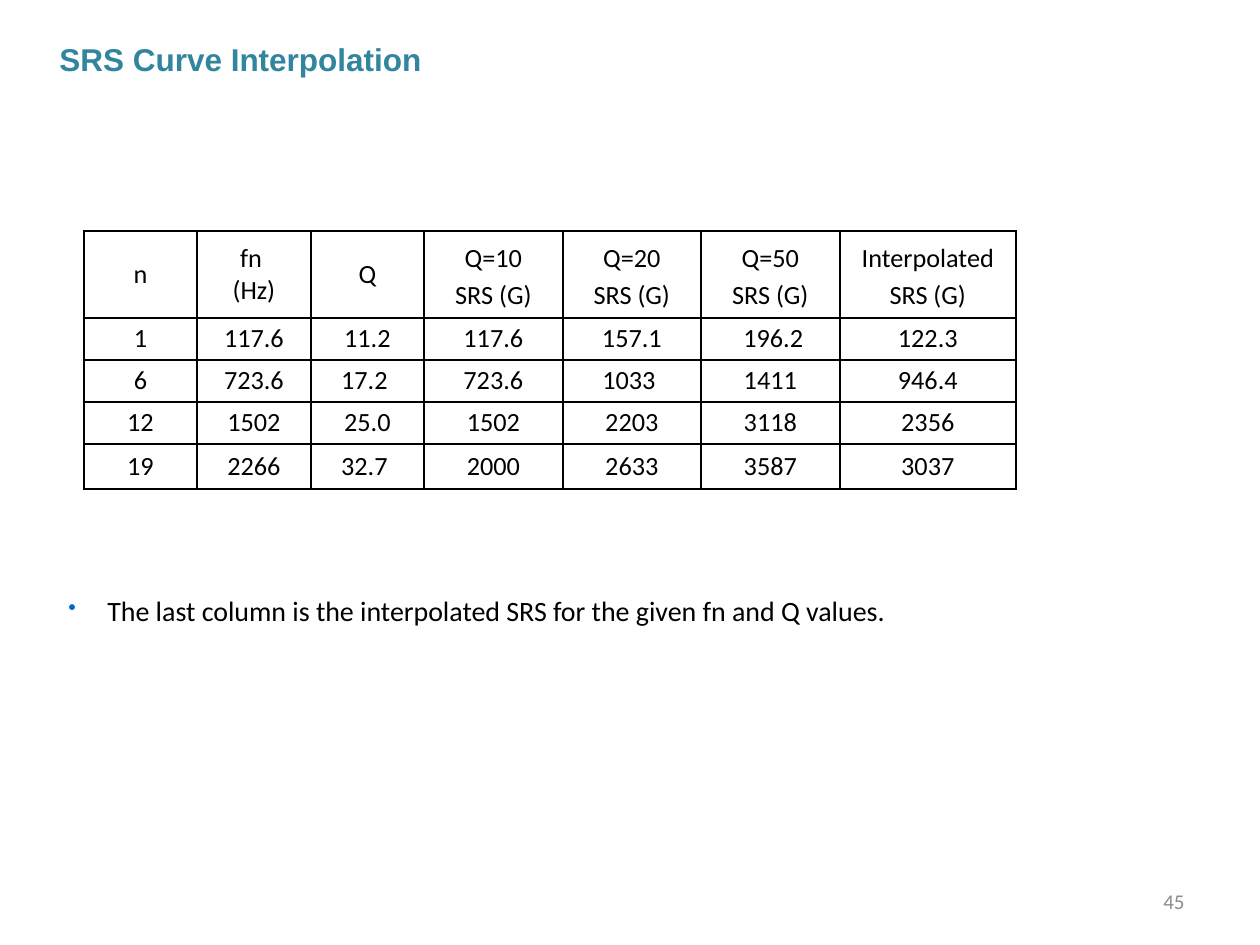
from lxml.etree import SubElement
from pptx import Presentation
from pptx.dml.color import RGBColor
from pptx.enum.text import MSO_ANCHOR, PP_ALIGN
from pptx.oxml.ns import qn
from pptx.util import Pt

COLORS = {"ink": "000000", "title": "31859C", "bullet": "0066CC", "number": "8C8C8C"}
COLUMN_WIDTHS = [113, 114, 113, 139, 138, 139, 176]
ROW_HEIGHTS = [87, 42, 42, 42, 45]
ROWS = [
    ["n", "fn \n(Hz)", "Q", "Q=10\nSRS (G)", "Q=20\nSRS (G)", "Q=50\nSRS (G)",
     "Interpolated\nSRS (G)"],
    ["1", "117.6", "11.2", "117.6", "157.1", " 196.2", "122.3"],
    ["6", "723.6", "17.2 ", "723.6", "1033 ", "1411", "946.4"],
    ["12", "1502", "25.0", "1502", "2203", "3118", "2356"],
    ["19", "2266", "32.7 ", "2000", "2633", "3587", "3037"],
]


def px(length):
    """Turn pixels into EMU at 126 pixels to the inch."""
    return round(length * 914400 / 126)


def style(paragraph, size, color, font="Calibri", bold=False):
    """Set the font of a paragraph."""
    paragraph.font.size = Pt(size)
    paragraph.font.name = font
    paragraph.font.bold = bold
    paragraph.font.color.rgb = RGBColor.from_string(COLORS[color])


def add_text(page, bounds, text, size, color, font="Calibri", bold=False, spacing=0):
    """Add a wrapped text box and return its paragraph."""
    box = page.shapes.add_textbox(*map(px, bounds))
    box.text_frame.word_wrap = True
    paragraph = box.text_frame.paragraphs[0]
    paragraph.text = text
    paragraph.space_before = paragraph.space_after = Pt(spacing)
    style(paragraph, size, color, font, bold)
    return paragraph


def add_bullet(paragraph, indent):
    """Give a paragraph a hanging bullet."""
    properties = paragraph._p.get_or_add_pPr()
    properties.set("marL", str(px(indent)))
    properties.set("indent", str(-px(indent)))
    marks = [SubElement(properties, qn(tag)) for tag in ("a:buClr", "a:buSzPct", "a:buChar")]
    SubElement(marks[0], qn("a:srgbClr"), val=COLORS["bullet"])
    marks[1].set("val", "80000")
    marks[2].set("char", "•")
    default_font = properties.find(qn("a:defRPr"))
    if default_font is not None:
        properties.append(default_font)


def add_borders(cell):
    """Draw a thin line on all four sides of a cell."""
    properties = cell._tc.get_or_add_tcPr()
    for position, side in enumerate(("a:lnL", "a:lnR", "a:lnT", "a:lnB")):
        line = SubElement(properties, qn(side), w=str(Pt(1)))
        fill = SubElement(line, qn("a:solidFill"))
        SubElement(fill, qn("a:srgbClr"), val=COLORS["ink"])
        properties.insert(position, line)


def fill_cell(cell, text):
    """Write centred text into a bordered cell without fill."""
    cell.fill.background()
    add_borders(cell)
    cell.vertical_anchor = MSO_ANCHOR.MIDDLE
    cell.margin_left = cell.margin_right = px(9)
    cell.margin_top = cell.margin_bottom = 0
    cell.text = text
    for paragraph in cell.text_frame.paragraphs:
        paragraph.alignment = PP_ALIGN.CENTER
        if "SRS" in text:
            paragraph.line_spacing = 1.15
        style(paragraph, 15, "ink")


def add_srs_table(page):
    """Add the table of interpolated SRS values."""
    table = page.shapes.add_table(
        len(ROWS), len(COLUMN_WIDTHS), px(84), px(231),
        px(sum(COLUMN_WIDTHS)), px(sum(ROW_HEIGHTS))).table
    table.first_row = table.horz_banding = False
    for column, width in zip(table.columns, COLUMN_WIDTHS):
        column.width = px(width)
    for row, height, texts in zip(table.rows, ROW_HEIGHTS, ROWS):
        row.height = px(height)
        for cell, text in zip(row.cells, texts):
            fill_cell(cell, text)


def main():
    """Build the slide and save it."""
    deck = Presentation()
    deck.slide_width, deck.slide_height = px(1260), px(945)
    page = deck.slides.add_slide(deck.slide_layouts[6])
    number = add_text(page, (903, 876, 294, 50), "45", 12, "number")
    number.alignment = PP_ALIGN.RIGHT
    page.shapes[0].text_frame.vertical_anchor = MSO_ANCHOR.MIDDLE
    add_srs_table(page)
    note = add_text(
        page, (56, 587, 1145, 47),
        "The last column is the interpolated SRS for the given fn and Q values.",
        16, "ink", spacing=2)
    add_bullet(note, 39)
    add_text(page, (47, 34, 1076, 50), "SRS Curve Interpolation", 18, "title",
             font="Arial", bold=True, spacing=2)
    deck.save("out.pptx")


if __name__ == "__main__":
    main()
